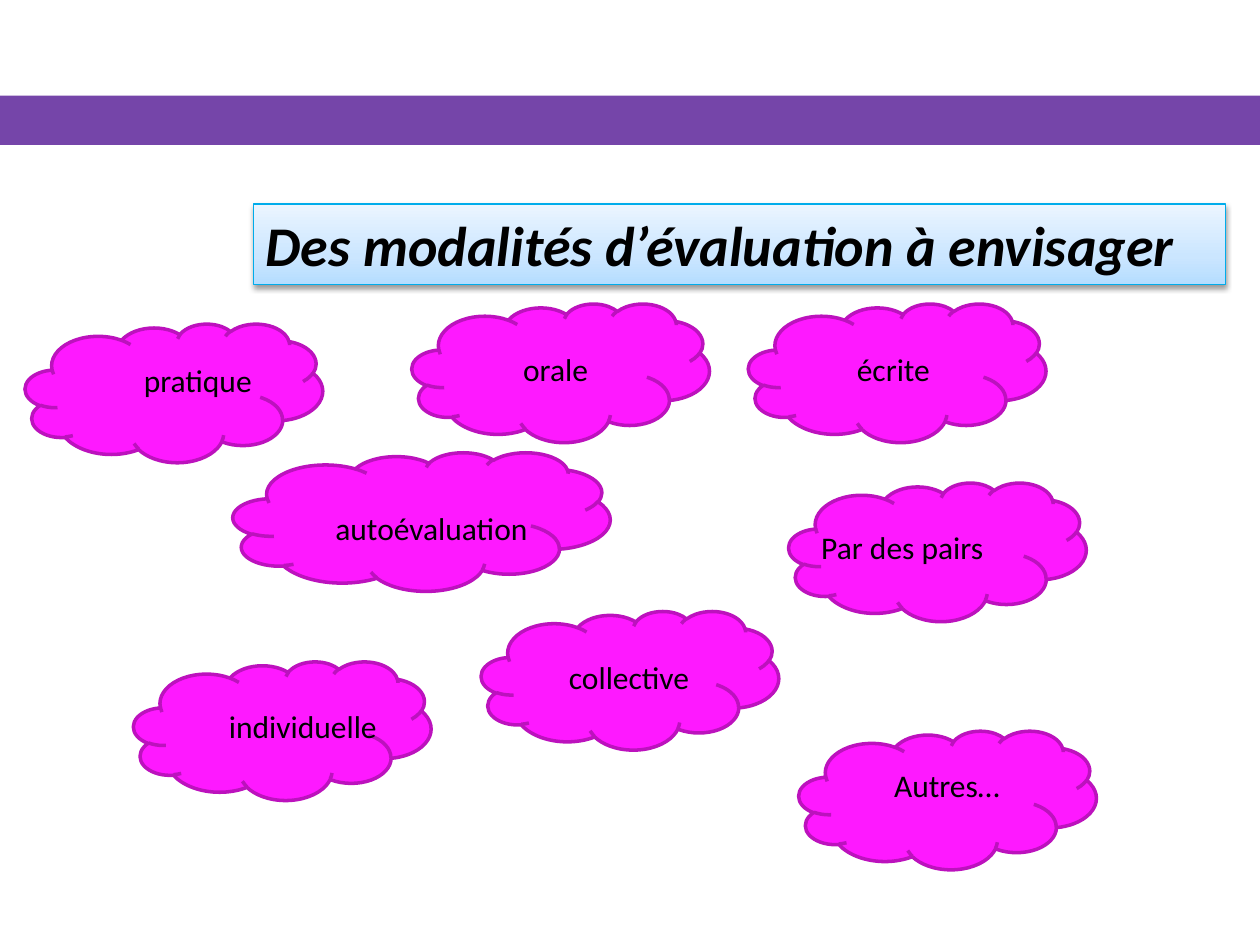
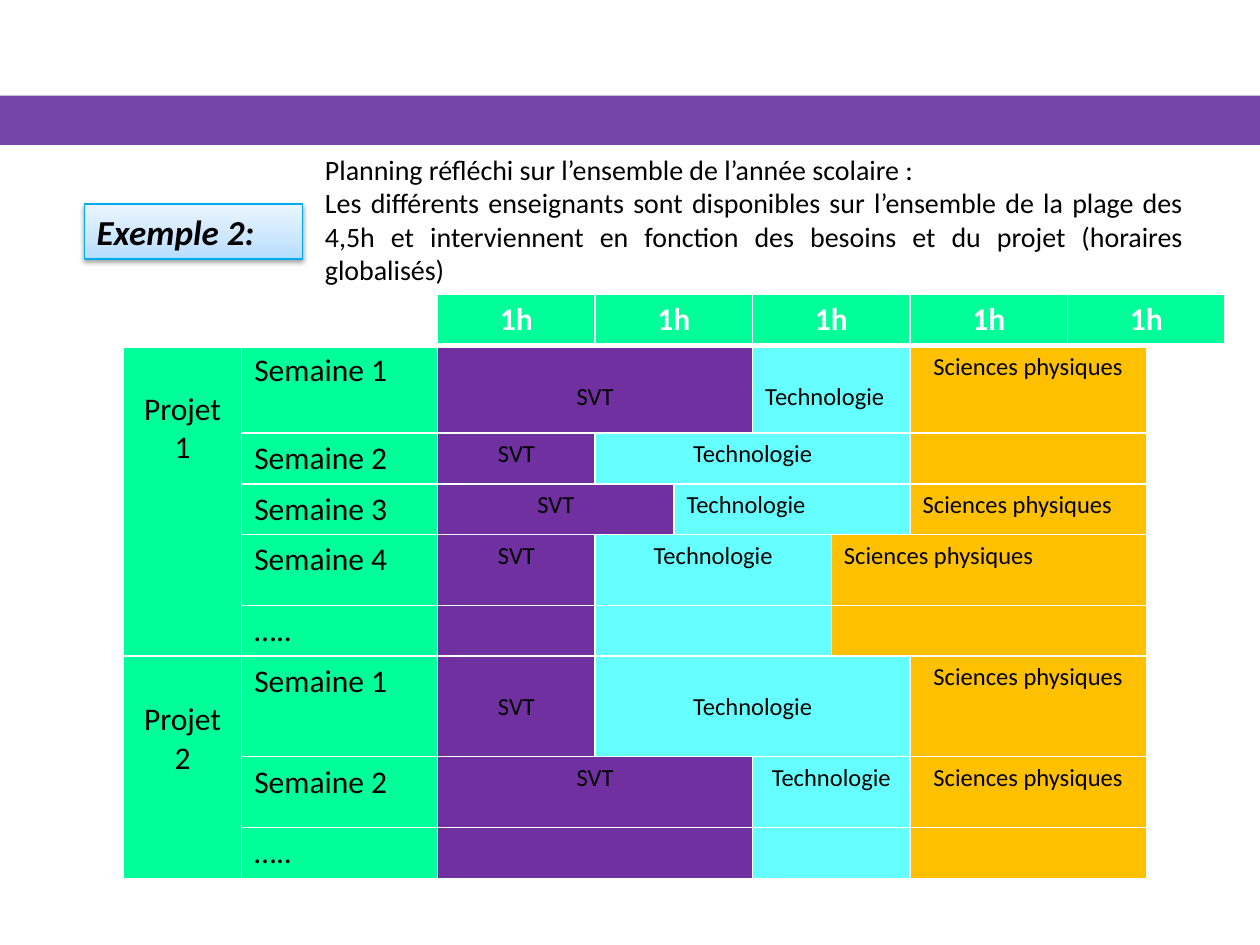
from dataclasses import dataclass

from lxml import etree
from pptx import Presentation
from pptx.dml.color import RGBColor
from pptx.enum.shapes import MSO_SHAPE
from pptx.enum.text import MSO_ANCHOR, PP_ALIGN
from pptx.oxml import parse_xml
from pptx.oxml.ns import nsdecls, qn
from pptx.util import Pt

RECT, CLOUD = MSO_SHAPE.RECTANGLE, MSO_SHAPE.CLOUD
LEFT, CENTER, JUSTIFY = PP_ALIGN.LEFT, PP_ALIGN.CENTER, PP_ALIGN.JUSTIFY
TOP, MIDDLE = MSO_ANCHOR.TOP, MSO_ANCHOR.MIDDLE

FONT = "Calibri"
BLACK, WHITE = "000000", "FFFFFF"
BAND, EDGE = "7545A9", "00ACEB"
PINK, PLUM = "FE19FF", "BC12BD"
GREEN = "00FF99"
STOPS = ((0, "B5DDFF"), (35, "CBE6FF"), (100, "EBF5FF"))
SUBJECTS = (("SVT", "7030A0"), ("Technologie", "66FFFF"), ("Sciences physiques", "FFC000"))
ALIGNS = {"l": LEFT, "c": CENTER}

WIDTHS = (67.5, 112, 90, 45, 45, 45, 45, 90, 45, 45)
HOURS = ((2, 1), (3, 2), (5, 2), (7, 1), (8, 2))
HEAD = 29.5
PAD = 3.6
LINE = 1.22  # line height of the font, relative to its size


@dataclass
class Style:
    size: float
    color: str = BLACK
    bold: bool = False
    italic: bool = False
    align: PP_ALIGN = LEFT


@dataclass
class Idea:
    """A cloud (x, y, wide) and its label box (tx, ty, tw)."""
    word: str
    x: float
    y: float
    tx: float
    ty: float
    tw: float
    wide: float = 170
    align: PP_ALIGN = CENTER


@dataclass
class Week:
    """Columns where the 2nd and 3rd subjects start; one mark per subject:
    l or c aligns its name, - hides it. The first `drop` names sit a line lower."""
    label: str
    high: float
    tech: int
    phys: int
    marks: str
    drop: int = 0


IDEAS = (
    Idea("pratique", 14.4, 185, 70.5, 202.5, 85),
    Idea("autoévaluation", 133.2, 258.5, 172.8, 287.3, 147.5, 215.5),
    Idea("collective", 275, 349.2, 303, 372.2, 113),
    Idea("orale", 235.4, 173.5, 275, 196.6, 85),
    Idea("écrite", 427.7, 173.5, 468, 196.6, 85),
    Idea("Par des pairs", 450.7, 275.8, 462.2, 298, 153.5, align=LEFT),
    Idea("individuelle", 76.3, 378, 110.9, 400.3, 124.5),
    Idea("Autres…", 456.5, 417.6, 484.6, 434.2, 113),
)

PROJECTS = (
    ("Projet 1", (
        Week("Semaine 1", 50, 5, 7, "clc", 2),
        Week("Semaine 2", 29, 3, 7, "cc-"),
        Week("Semaine 3", 29, 4, 7, "cll"),
        Week("Semaine 4", 40.5, 3, 6, "ccl"),
        Week("…..", 29, 3, 6, "---"),
    )),
    ("Projet 2", (
        Week("Semaine 1", 57.5, 3, 7, "ccc", 2),
        Week("Semaine 2", 40.5, 5, 7, "ccc"),
        Week("…..", 29, 5, 7, "---"),
    )),
)


def rgb(code: str) -> RGBColor:
    return RGBColor.from_string(code)


def write(frame, lines: tuple, style: Style) -> None:
    for i, line in enumerate(lines):
        para = frame.paragraphs[0] if i == 0 else frame.add_paragraph()
        para.alignment = style.align
        run = para.add_run()
        run.text = line
        font = run.font
        font.name, font.size = FONT, Pt(style.size)
        font.bold, font.italic = style.bold, style.italic
        font.color.rgb = rgb(style.color)


def shape(slide, kind, x: float, y: float, w: float, h: float,
          fill: str, line: str = "", width: float = 1):
    item = slide.shapes.add_shape(kind, Pt(x), Pt(y), Pt(w), Pt(h))
    item.shadow.inherit = False
    item.fill.solid()
    item.fill.fore_color.rgb = rgb(fill)
    if line:
        item.line.color.rgb = rgb(line)
        item.line.width = Pt(width)
    else:
        item.line.fill.background()
    return item


def text(slide, x: float, y: float, w: float, h: float,
         lines: tuple, style: Style, anchor=TOP) -> None:
    frame = slide.shapes.add_textbox(Pt(x), Pt(y), Pt(w), Pt(h)).text_frame
    frame.word_wrap = True
    frame.vertical_anchor = anchor
    write(frame, lines, style)


def title(slide, x: float, w: float, h: float, words: str, size: float) -> None:
    """Draw the glossy, shadowed title box."""
    box = shape(slide, RECT, x, 116.6, w, h, STOPS[1][1], EDGE, 0.75)
    props = box.fill._xPr
    stops = "".join(f'<a:gs pos="{pos * 1000}"><a:srgbClr val="{code}"/></a:gs>'
                    for pos, code in STOPS)
    props.replace(props.find(qn("a:solidFill")), parse_xml(
        f'<a:gradFill {nsdecls("a")} rotWithShape="1"><a:gsLst>{stops}</a:gsLst>'
        '<a:lin ang="16200000" scaled="0"/></a:gradFill>'))
    props.find(qn("a:effectLst")).append(parse_xml(
        f'<a:outerShdw {nsdecls("a")} blurRad="{Pt(3.1)}" dist="{Pt(1.6)}" '
        'dir="5400000" rotWithShape="0"><a:srgbClr val="000000">'
        '<a:alpha val="38000"/></a:srgbClr></a:outerShdw>'))
    frame = box.text_frame
    frame.word_wrap = True
    frame.vertical_anchor = TOP
    write(frame, (words,), Style(size, bold=True, italic=True))


def border(cell, base: float) -> None:
    """Give a cell white sides, with a bottom edge of its own width."""
    props = cell._tc.get_or_add_tcPr()
    for side, width in (("L", 1), ("R", 1), ("T", 1), ("B", base)):
        edge = etree.SubElement(props, qn(f"a:ln{side}"), w=str(Pt(width)))
        paint = etree.SubElement(edge, qn("a:solidFill"))
        etree.SubElement(paint, qn("a:srgbClr"), val=WHITE)


def put(table, row: int, col: int, words: str, fill: str, style: Style,
        wide: int = 1, high: int = 1, drop: bool = False) -> None:
    """Fill a block of cells; drop moves its text one line down."""
    cell = table.cell(row, col)
    if wide * high > 1:
        cell.merge(table.cell(row + high - 1, col + wide - 1))
    cell.fill.solid()
    cell.fill.fore_color.rgb = rgb(fill)
    if drop:
        cell.margin_top = Pt(PAD + style.size * LINE)
    if words:
        write(cell.text_frame, (words,), style)


def grid(slide):
    """Add the bare table: sizes and borders, no fill."""
    highs = [HEAD] + [week.high for _, weeks in PROJECTS for week in weeks]
    table = slide.shapes.add_table(len(highs), len(WIDTHS), Pt(70.6), Pt(168),
                                   Pt(sum(WIDTHS)), Pt(sum(highs))).table
    table.first_row = table.horz_banding = False
    for col, width in zip(table.columns, WIDTHS):
        col.width = Pt(width)
    for i, (row, high) in enumerate(zip(table.rows, highs)):
        row.height = Pt(high)
        for cell in row.cells:
            border(cell, 1 if i else 3)
            cell.fill.background()
    return table


def plan(slide) -> None:
    table = grid(slide)
    for col, wide in HOURS:
        put(table, 0, col, "1h", GREEN, Style(18, WHITE, True, align=CENTER), wide)
    row = 1
    for name, weeks in PROJECTS:
        put(table, row, 0, name, GREEN, Style(18, align=CENTER),
            high=len(weeks), drop=True)
        for week in weeks:
            put(table, row, 1, week.label, GREEN, Style(18))
            stops = (2, week.tech, week.phys, 9)
            for i, ((topic, fill), mark) in enumerate(zip(SUBJECTS, week.marks)):
                put(table, row, stops[i], topic if mark in ALIGNS else "", fill,
                    Style(14, align=ALIGNS.get(mark, LEFT)),
                    stops[i + 1] - stops[i], drop=i < week.drop)
            row += 1
    table.cell(1, 9).merge(table.cell(4, 9))


def page(deck):
    slide = deck.slides.add_slide(deck.slide_layouts[6])
    shape(slide, RECT, 0, 54.6, 720, 28.2, BAND)
    return slide


def modes(deck) -> None:
    slide = page(deck)
    title(slide, 144.7, 555.8, 46, "Des modalités d’évaluation à envisager", 32)
    for idea in IDEAS:
        shape(slide, CLOUD, idea.x, idea.y, idea.wide, 79.2, PINK, PLUM, 2)
        text(slide, idea.tx, idea.ty, idea.tw, 29, (idea.word,),
             Style(18, align=idea.align))


def sample(deck) -> None:
    slide = page(deck)
    plan(slide)
    title(slide, 48.2, 124.6, 31.5, "Exemple 2:", 20)
    text(slide, 178.6, 82.8, 504.7, 85, (
        "Planning réfléchi sur l’ensemble de l’année scolaire :",
        "Les différents enseignants sont disponibles sur l’ensemble de la plage "
        "des 4,5h et interviennent en fonction des besoins et du projet "
        "(horaires globalisés)",
    ), Style(16, align=JUSTIFY), MIDDLE)


def main() -> None:
    deck = Presentation()
    deck.slide_width, deck.slide_height = Pt(720), Pt(540)
    modes(deck)
    sample(deck)
    deck.save("out.pptx")


if __name__ == "__main__":
    main()
